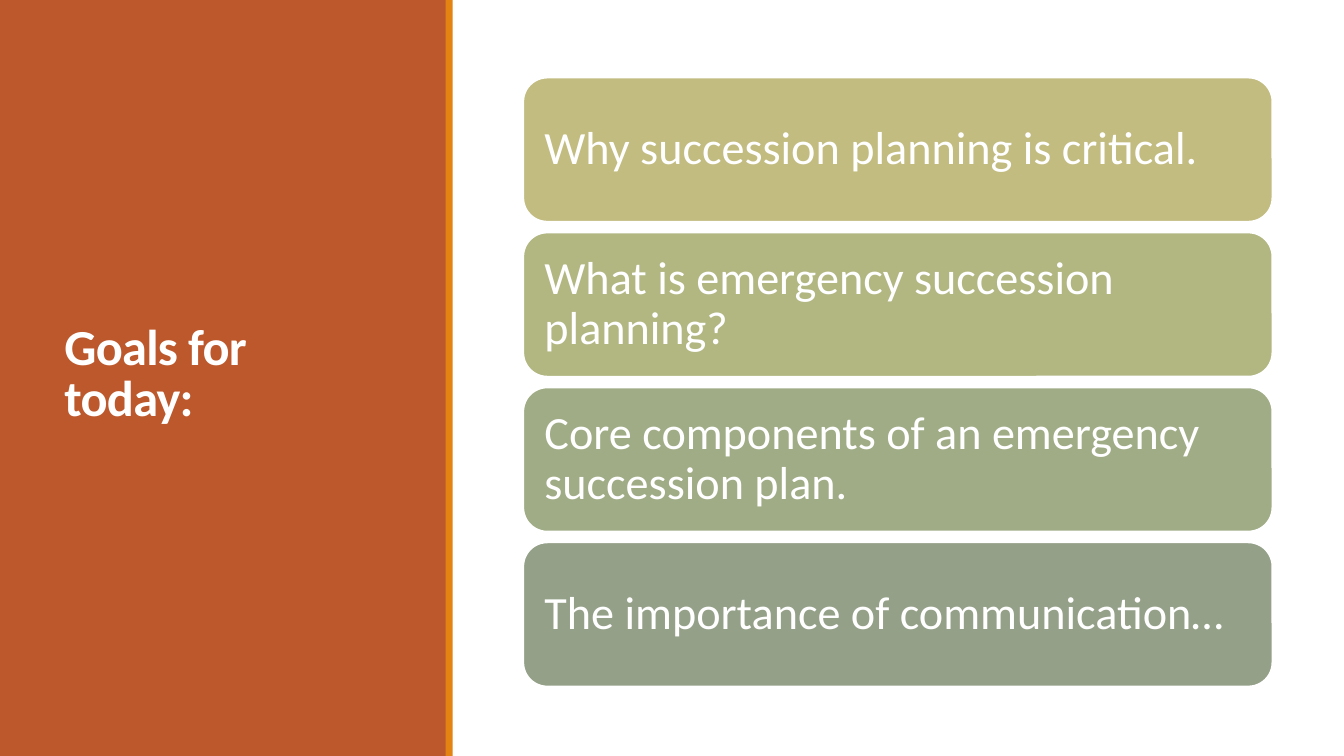
"""Builds the slide listing the goals for today's succession planning session."""
from pptx import Presentation
from pptx.dml.color import RGBColor
from pptx.enum.shapes import MSO_SHAPE as Preset
from pptx.enum.text import MSO_ANCHOR as Anchor, PP_ALIGN as Align
from pptx.util import Inches, Pt

WHITE = RGBColor(0xFF, 0xFF, 0xFF)
RUST = RGBColor(0xBD, 0x58, 0x2C)
ORANGE = RGBColor(0xE4, 0x83, 0x12)
KHAKI = RGBColor(0xC2, 0xBC, 0x80)
OLIVE = RGBColor(0xB2, 0xB7, 0x82)
SAGE = RGBColor(0xA0, 0xAC, 0x85)
GREY_GREEN = RGBColor(0x94, 0xA0, 0x88)

GOALS = [
    ("Why succession planning is critical.", KHAKI),
    ("What is emergency succession planning?", OLIVE),
    ("Core components of an emergency succession plan.", SAGE),
    ("The importance of communication…", GREY_GREEN),
]
CARD_TOP, CARD_STEP = 0.77, 1.537


def add_block(preset, left, top, width, height, color):
    block = slide.shapes.add_shape(
        preset, Inches(left), Inches(top), Inches(width), Inches(height))
    block.shadow.inherit = False
    block.fill.solid()
    block.fill.fore_color.rgb = color
    block.line.fill.background()
    return block


def write_text(frame, text, size, spacing, bold=False):
    frame.word_wrap = True
    frame.vertical_anchor = Anchor.MIDDLE
    paragraph = frame.paragraphs[0]
    paragraph.text = text
    paragraph.alignment = Align.LEFT
    paragraph.line_spacing = spacing
    paragraph.font.name = "Calibri"
    paragraph.font.size = Pt(size)
    paragraph.font.bold = bold
    paragraph.font.color.rgb = WHITE


deck = Presentation()
deck.slide_width, deck.slide_height = Inches(13.33), Inches(7.5)
slide = deck.slides.add_slide(deck.slide_layouts[6])

add_block(Preset.RECTANGLE, 0, 0, 4.43, 7.5, RUST)
add_block(Preset.RECTANGLE, 4.42, 0, 0.07, 7.5, ORANGE)

heading = slide.shapes.add_textbox(Inches(0.54), Inches(0.57), Inches(3.37), Inches(6.31))
heading.text_frame.margin_right = Inches(0.2)
write_text(heading.text_frame, "Goals for today:", 36, 0.85, bold=True)
heading.text_frame.paragraphs[0].runs[0].font._element.set("spc", "-50")

for row, (goal, color) in enumerate(GOALS):
    card = add_block(Preset.ROUNDED_RECTANGLE, 5.19, CARD_TOP + row * CARD_STEP, 7.43, 1.43, color)
    card.line.color.rgb = WHITE
    card.line.width = Pt(1.25)
    frame = card.text_frame
    frame.margin_left = frame.margin_right = Inches(0.14)
    frame.margin_top = frame.margin_bottom = Inches(0.14)
    write_text(frame, goal, 33, 0.9)

deck.save("out.pptx")
